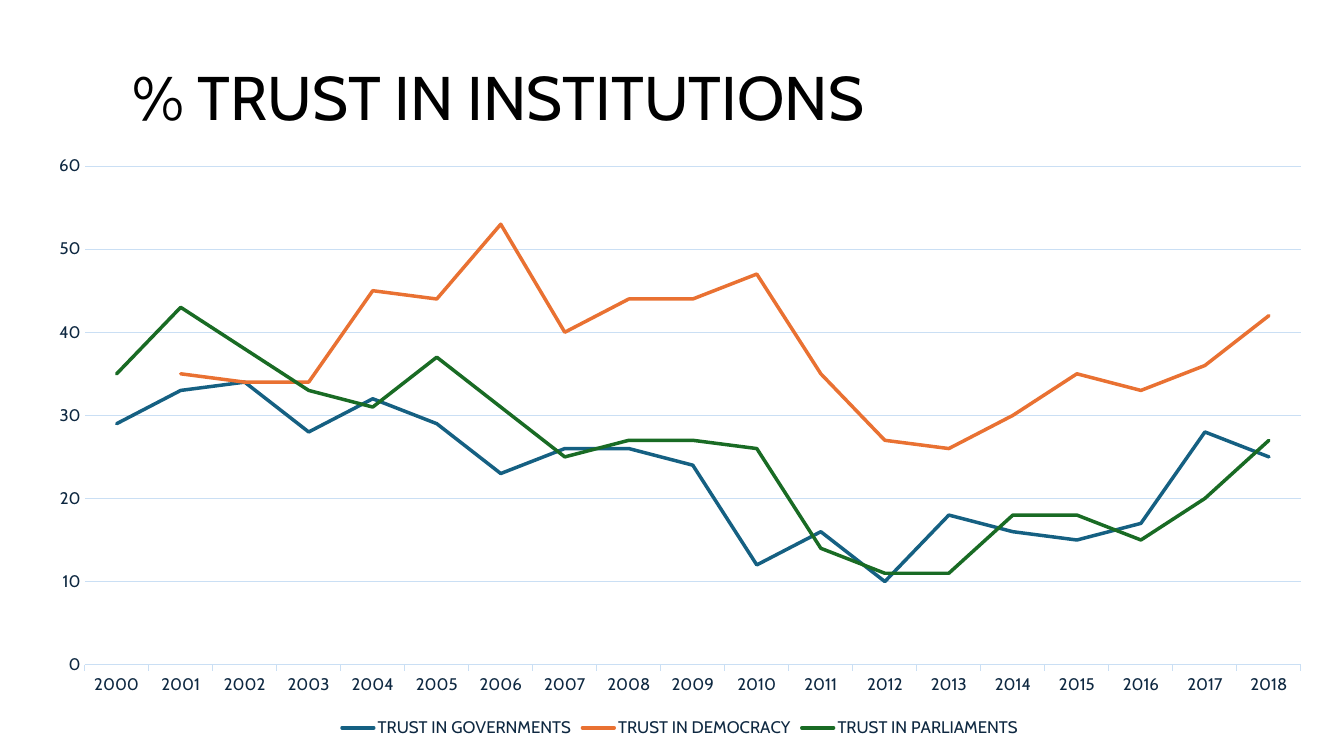
from dataclasses import dataclass

from pptx import Presentation
from pptx.chart.data import CategoryChartData
from pptx.dml.color import RGBColor
from pptx.enum.chart import XL_CHART_TYPE as ChartType
from pptx.enum.chart import XL_LEGEND_POSITION as LegendPosition
from pptx.enum.chart import XL_TICK_MARK as TickMark
from pptx.enum.text import MSO_ANCHOR, MSO_AUTO_SIZE, PP_ALIGN
from pptx.util import Inches, Pt


@dataclass(frozen=True)
class Theme:
    font: str = "Cabin"
    title_color: str = "000000"
    label_color: str = "0E2841"
    grid_color: str = "CADFF4"
    title_size: float = 44
    label_size: float = 12
    grid_width: float = 0.75
    series_width: float = 2.5


THEME = Theme()
YEARS = range(2000, 2019)
TRUST = [
    ("TRUST IN GOVERNMENTS", "156082",
     [29, 33, 34, 28, 32, 29, 23, 26, 26, 24, 12, 16, 10, 18, 16, 15, 17, 28, 25]),
    ("TRUST IN DEMOCRACY", "E97132",
     [None, 35, 34, 34, 45, 44, 53, 40, 44, 44, 47, 35, 27, 26, 30, 35, 33, 36, 42]),
    ("TRUST IN PARLIAMENTS", "196B24",
     [35, 43, 38, 33, 31, 37, 31, 25, 27, 27, 26, 14, 11, 11, 18, 18, 15, 20, 27]),
]


def format_font(font, size=THEME.label_size, color=THEME.label_color):
    font.name = THEME.font
    font.size = Pt(size)
    font.bold = False
    font.color.rgb = RGBColor.from_string(color)


def format_line(line, color=THEME.grid_color, width=THEME.grid_width):
    line.color.rgb = RGBColor.from_string(color)
    line.width = Pt(width)


def write_text(shape, text, *, size, color, align=PP_ALIGN.LEFT, spacing=0.9):
    frame = shape.text_frame
    frame.word_wrap = True
    frame.auto_size = MSO_AUTO_SIZE.NONE
    frame.vertical_anchor = MSO_ANCHOR.MIDDLE
    para = frame.paragraphs[0]
    para.alignment = align
    para.line_spacing = spacing
    span = para.add_run()
    span.text = text
    format_font(span.font, size, color)


def place_title(page, text):
    title = page.shapes.title
    title.left, title.top = Inches(1.21), Inches(0.58)
    title.width, title.height = Inches(10.92), Inches(0.84)
    write_text(title, text, size=THEME.title_size, color=THEME.title_color)


def format_axes(chart):
    years, percent = chart.category_axis, chart.value_axis
    for axis in (years, percent):
        format_font(axis.tick_labels.font)
        axis.minor_tick_mark = TickMark.NONE
    years.major_tick_mark = TickMark.OUTSIDE
    format_line(years.format.line)
    percent.major_tick_mark = TickMark.NONE
    percent.minimum_scale, percent.maximum_scale = 0, 60
    percent.major_unit = 10
    percent.format.line.fill.background()
    percent.has_major_gridlines = True
    format_line(percent.major_gridlines.format.line)


def add_trust_chart(page):
    data = CategoryChartData()
    data.categories = [str(year) for year in YEARS]
    for name, _, values in TRUST:
        data.add_series(name, values)
    chart = page.shapes.add_chart(
        ChartType.LINE, Inches(0.33), Inches(1.43), Inches(12.83), Inches(5.93), data
    ).chart
    chart.has_title = False
    format_font(chart.font)
    format_axes(chart)
    chart.has_legend = True
    chart.legend.position = LegendPosition.BOTTOM
    chart.legend.include_in_layout = False
    format_font(chart.legend.font)
    plot = chart.plots[0]
    plot.vary_by_categories = False
    for series, (_, color, _) in zip(plot.series, TRUST):
        series.smooth = False
        format_line(series.format.line, color, THEME.series_width)
        for line in series.format.line.fill._xPr.iter("{*}ln"):
            line.set("cap", "rnd")


def main():
    deck = Presentation()
    deck.slide_width, deck.slide_height = Inches(13.33), Inches(7.5)
    title_only = deck.slide_layouts[5]
    page = deck.slides.add_slide(title_only)
    place_title(page, "% TRUST IN INSTITUTIONS")
    add_trust_chart(page)
    deck.save("out.pptx")


if __name__ == "__main__":
    main()
